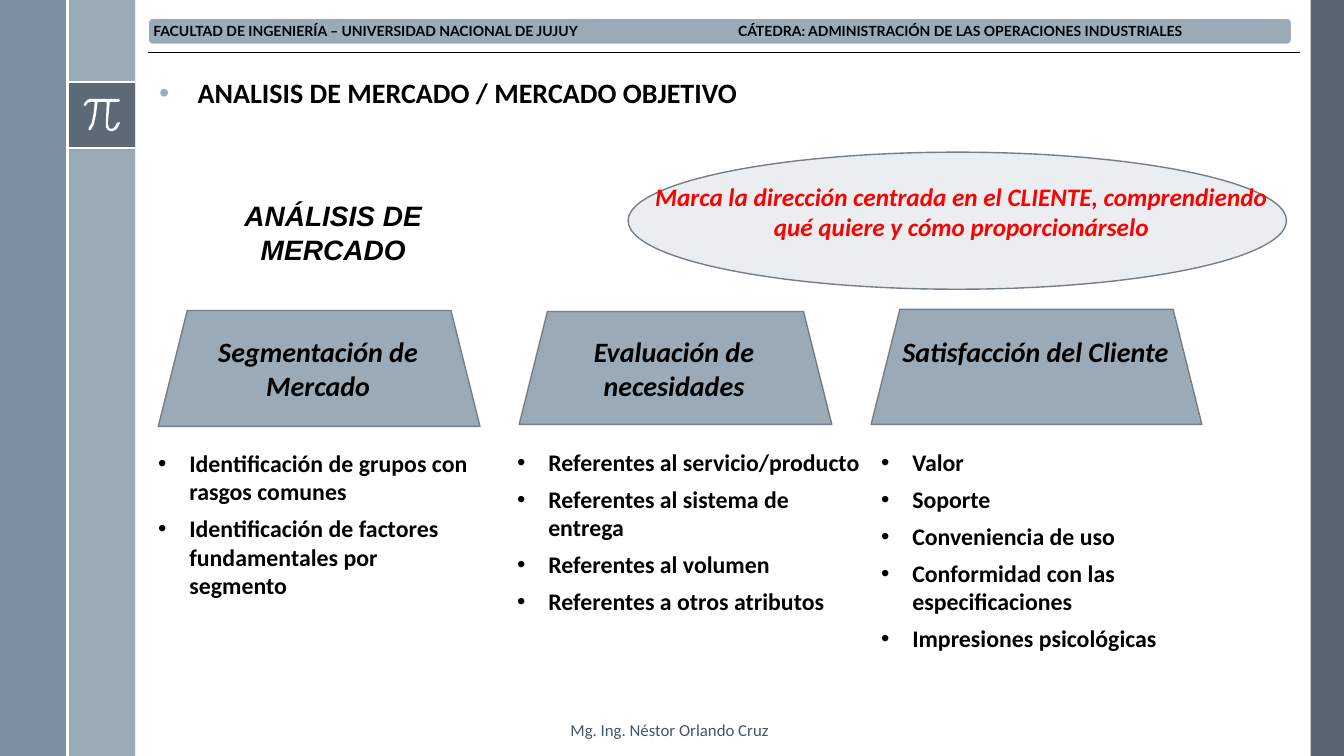
"""Build the market analysis slide with its three columns."""
from lxml import etree
from pptx import Presentation
from pptx.dml.color import RGBColor
from pptx.enum.shapes import MSO_CONNECTOR, MSO_SHAPE
from pptx.enum.text import MSO_ANCHOR, MSO_AUTO_SIZE, PP_ALIGN
from pptx.oxml.ns import qn
from pptx.util import Inches, Pt

RECT, ROUND = MSO_SHAPE.RECTANGLE, MSO_SHAPE.ROUNDED_RECTANGLE
OVAL, TRAP = MSO_SHAPE.OVAL, MSO_SHAPE.TRAPEZOID
LINE = MSO_CONNECTOR.STRAIGHT
LEFT, MID = PP_ALIGN.LEFT, PP_ALIGN.CENTER
TOP, CENTER = MSO_ANCHOR.TOP, MSO_ANCHOR.MIDDLE
FIXED = MSO_AUTO_SIZE.NONE
STEEL, EDGE, WHITE, BLACK = "9BAAB7", "737E87", "FFFFFF", "000000"

prs = Presentation()
prs.slide_width, prs.slide_height = Inches(13.33), Inches(7.5)
slide = prs.slides.add_slide(prs.slide_layouts[5])
shapes = slide.shapes


def paint(item, hue, edge=None, alpha=100):
    """Fill a shape and set its outline."""
    item.shadow.inherit = False
    item.fill.solid()
    item.fill.fore_color.rgb = RGBColor.from_string(hue)
    if alpha < 100:
        tone = item.fill._xPr.find(".//" + qn("a:srgbClr"))
        etree.SubElement(tone, qn("a:alpha")).set("val", str(alpha * 1000))
    if edge:
        item.line.color.rgb = RGBColor.from_string(edge)
        item.line.width = Pt(1)
    else:
        item.line.fill.background()


def write(text, at, size=20, font="Calibri", hue=BLACK, bold=True, italic=False,
          align=LEFT, bullet=None, indent=0.31, before=0, tab=None,
          anchor=TOP, inset=None, box=None):
    """Put text, one paragraph a line, in a new box or a given one."""
    if box is None:
        box = shapes.add_textbox(0, 0, 0, 0)
    box.left, box.top, box.width, box.height = map(Inches, at)
    frame = box.text_frame
    frame.word_wrap, frame.auto_size = True, FIXED
    frame.vertical_anchor = anchor
    if inset is not None:
        frame.margin_left = frame.margin_right = Inches(inset)
        frame.margin_top = frame.margin_bottom = Inches(inset)
    frame.text = text
    for para in frame.paragraphs:
        para.alignment, para.space_before = align, Pt(before)
        props = para._p.get_or_add_pPr()
        if bullet:
            props.set("marL", str(Inches(indent)))
            props.set("indent", str(-Inches(indent)))
            tone = etree.SubElement(props, qn("a:buClr"))
            etree.SubElement(tone, qn("a:srgbClr")).set("val", bullet)
            mark = etree.SubElement(props, qn("a:buFont"))
            mark.set("typeface", "Arial")
            etree.SubElement(props, qn("a:buChar")).set("char", "•")
        if tab:
            tabs = etree.SubElement(props, qn("a:tabLst"))
            stop = etree.SubElement(tabs, qn("a:tab"))
            stop.set("pos", str(Inches(tab)))
            stop.set("algn", "l")
        for run in para.runs:
            face = run.font
            face.size, face.name = Pt(size), font
            face.bold, face.italic = bold, italic
            face.color.rgb = RGBColor.from_string(hue)


bands = [
    ((13, 0, 0.33, 7.5), "475562", 90),
    ((0.67, 0, 0.67, 7.5), STEEL, 100),
    ((0, 0, 0.67, 7.5), "6A8093", 88),
    ((0.67, 0.81, 0.67, 0.67), "475562", 75),
]
for at, hue, alpha in bands:
    paint(shapes.add_shape(RECT, *map(Inches, at)), hue, alpha=alpha)

rules = [
    ((0.67, 0.81, 1.34, 0.81), WHITE, 1.5),
    ((0.67, 1.47, 1.34, 1.47), WHITE, 1.5),
    ((0.67, 0, 0.67, 7.5), WHITE, 1.5),
    ((1.47, 0.52, 12.89, 0.52), BLACK, 0.5),
]
for ends, hue, width in rules:
    rule = shapes.add_connector(LINE, *map(Inches, ends))
    rule.line.color.rgb = RGBColor.from_string(hue)
    rule.line.width = Pt(width)
    etree.SubElement(rule._element.spPr, qn("a:effectLst"))

outline = [
    (90, 98), (87, 99), (84, 102), (83, 104), (84, 105), (85, 105),
    (87, 102), (90, 101), (94, 101), (93, 112), (91, 122), (88, 127),
    (88, 129), (90, 129), (93, 124), (95, 115), (97, 101), (106, 101),
    (105, 122), (105, 126), (107, 129), (110, 130), (112, 130), (116, 128),
    (119, 122), (118, 121), (116, 122), (114, 126), (111, 128), (108, 127),
    (107, 122), (109, 101), (118, 101), (119, 100), (118, 98),
]
pen = shapes.build_freeform(118, 98, scale=Inches(0.01))
pen.add_line_segments(outline)
paint(pen.convert_to_shape(), WHITE)

bar = shapes.add_shape(ROUND, *map(Inches, (1.47, 0.18, 11.34, 0.26)))
paint(bar, STEEL, WHITE)
write("FACULTAD DE INGENIERÍA – UNIVERSIDAD NACIONAL DE JUJUY\t"
      "CÁTEDRA: ADMINISTRACIÓN DE LAS OPERACIONES INDUSTRIALES",
      (1.48, 0.19, 11.31, 0.24), size=10, font="Lato", tab=5.8,
      anchor=CENTER, inset=0.04)
write("ANALISIS DE MERCADO / MERCADO OBJETIVO", (1.48, 0.7, 7.93, 0.65),
      bullet=STEEL, indent=0.38, before=10, box=shapes.title)
write("ANÁLISIS DE MERCADO", (1.77, 1.92, 3.07, 0.77), font="Arial",
      italic=True, align=MID)

oval = shapes.add_shape(OVAL, *map(Inches, (6.23, 1.51, 6.53, 1.36)))
paint(oval, "EBEEF1", EDGE)
write("Marca la dirección centrada en el CLIENTE, comprendiendo qué quiere "
      "y cómo proporcionárselo", (6.31, 1.75, 6.45, 0.71), size=18,
      hue="FF0000", italic=True, align=MID)

columns = [
    ("Segmentación de Mercado", (1.57, 3.08, 3.19, 1.15),
     (1.8, 3.27, 2.71, 0.77), (1.47, 4.4, 3.29, 1.62),
     ["Identificación de grupos con rasgos comunes",
      "Identificación de factores fundamentales por segmento"]),
    ("Evaluación de necesidades", (5.15, 3.09, 3.1, 1.12),
     (5.57, 3.27, 2.23, 0.77), (5.03, 4.39, 3.64, 2.07),
     ["Referentes al servicio/producto", "Referentes al sistema de entrega",
      "Referentes al volumen", "Referentes a otros atributos"]),
    ("Satisfacción del Cliente", (8.64, 3.07, 3.28, 1.14),
     (8.77, 3.27, 3, 0.77), (8.64, 4.39, 3.6, 2.15),
     ["Valor", "Soporte", "Conveniencia de uso",
      "Conformidad con las especificaciones", "Impresiones psicológicas"]),
]
for head, block, label, area, points in columns:
    paint(shapes.add_shape(TRAP, *map(Inches, block)), STEEL, EDGE)
    write(head, label, italic=True, align=MID)
    write("\n".join(points), area, size=17, bullet=BLACK, before=6)

write("Mg. Ing. Néstor Orlando Cruz", (5.56, 7.09, 3.23, 0.3), size=12,
      hue="465562", bold=False)
prs.save("out.pptx")
